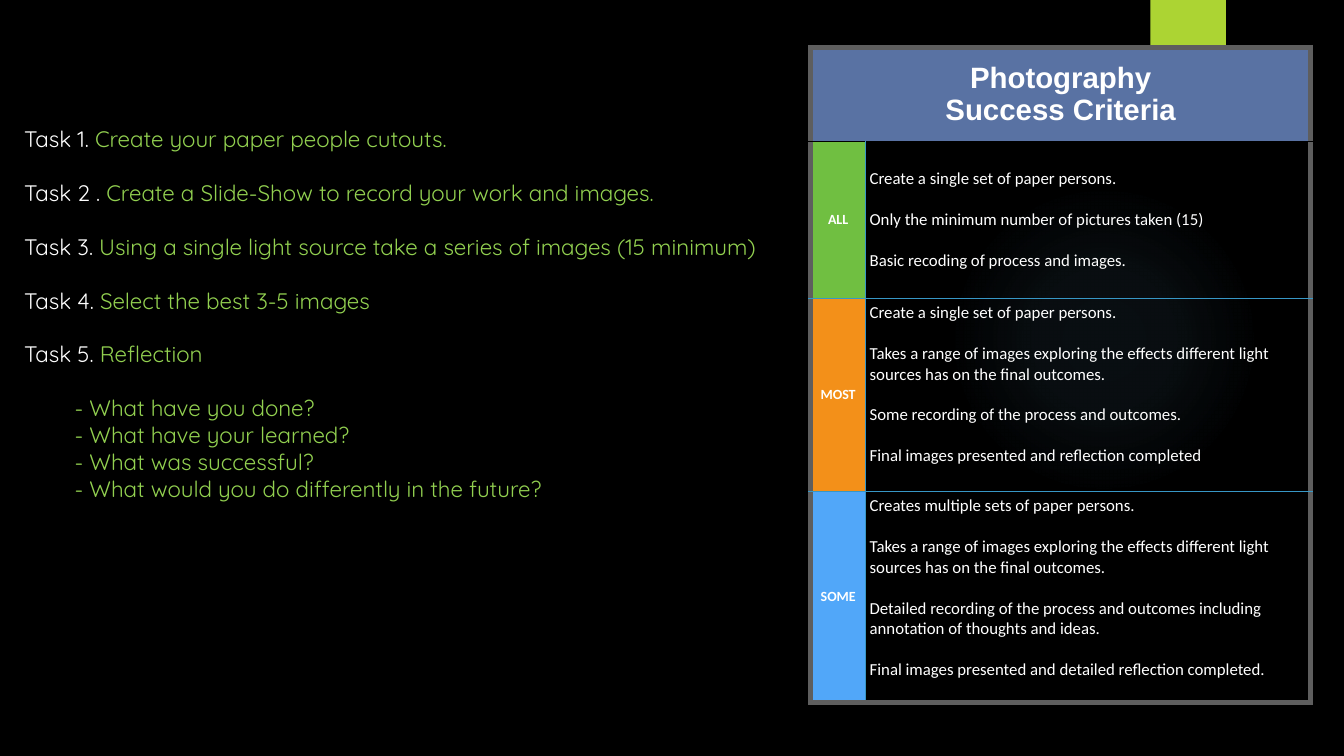
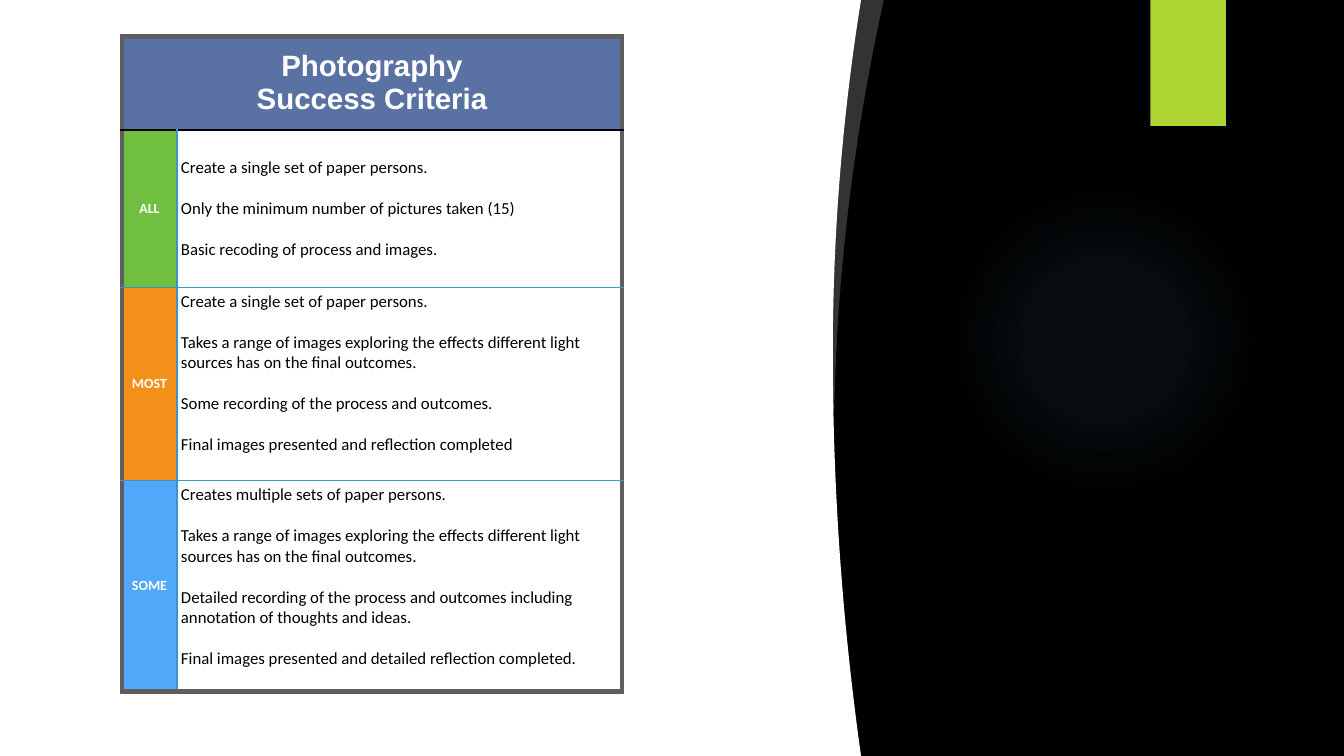
from dataclasses import dataclass

from lxml.etree import SubElement
from pptx import Presentation
from pptx.dml.color import RGBColor
from pptx.enum.shapes import MSO_SHAPE
from pptx.enum.text import MSO_ANCHOR, MSO_AUTO_SIZE, PP_ALIGN
from pptx.oxml import parse_xml
from pptx.oxml.ns import nsdecls, qn
from pptx.util import Inches, Pt

RECTANGLE, OVAL = MSO_SHAPE.RECTANGLE, MSO_SHAPE.OVAL
MIDDLE, TOP = MSO_ANCHOR.MIDDLE, MSO_ANCHOR.TOP
CENTER, LEFT = PP_ALIGN.CENTER, PP_ALIGN.LEFT
NO_AUTOFIT = MSO_AUTO_SIZE.NONE
SLIDE_W, SLIDE_H = 13.33, 7.5


@dataclass(frozen=True)
class Theme:
    """Colours, fonts and type sizes used by every slide."""
    dark: str = "000000"
    light: str = "FFFFFF"
    tab: str = "ACD433"
    glow: str = "7AC4F0"
    task: str = "92D050"
    header: str = "5972A3"
    frame: str = "5E5E5E"
    rule: str = "3797C6"
    frame_width: float = 4
    rule_width: float = 1
    task_font: str = "Quicksand"
    header_font: str = "Arial"
    table_font: str = "Calibri"
    task_size: float = 16
    header_size: float = 21
    label_size: float = 10
    criteria_size: float = 12
    task_gap: float = 19.3
    criteria_gap: float = 14.6


THEME = Theme()

TASKS = [
    ("Task 1. ", "Create your paper people cutouts."),
    ("Task 2 . ", "Create a Slide-Show to record your work and images."),
    ("Task 3. ", "Using a single light source take a series of images (15 minimum)"),
    ("Task 4. ", "Select the best 3-5 images"),
    ("Task 5. ", "Reflection"),
]
REFLECTIONS = [
    "- What have you done?",
    "- What have your learned?",
    "- What was successful?",
    "- What would you do differently in the future?",
]
HEADING = ["Photography", "Success Criteria"]
RANGE_OF_IMAGES = ("Takes a range of images exploring the effects different light "
                   "sources has on the final outcomes.")
LEVELS = [
    ("ALL", "70BF41", 1.56, 0.04, [
        "Create a single set of paper persons.",
        "Only the minimum number of pictures taken (15)",
        "Basic recoding of process and images.",
    ]),
    ("MOST", "F39019", 1.92, 0.25, [
        "Create a single set of paper persons.",
        RANGE_OF_IMAGES,
        "Some recording of the process and outcomes.",
        "Final images presented and reflection completed",
    ]),
    ("SOME", "51A7F9", 2.09, 0.22, [
        "Creates multiple sets of paper persons.",
        RANGE_OF_IMAGES,
        "Detailed recording of the process and outcomes including "
        "annotation of thoughts and ideas.",
        "Final images presented and detailed reflection completed.",
    ]),
]
HEADER_H = 0.93
LABEL_SHARE = 0.11


def rgb(value):
    """Turn a hex string into a colour."""
    return RGBColor.from_string(value)


def paint(shape, colour):
    """Give a shape a flat fill without outline or shadow."""
    shape.fill.solid()
    shape.fill.fore_color.rgb = rgb(colour)
    shape.line.fill.background()
    shape.shadow.inherit = False


def add_run(paragraph, text, font, size, colour, bold=False):
    """Append one formatted run to a paragraph."""
    run = paragraph.add_run()
    run.text = text
    run.font.name, run.font.size, run.font.bold = font, Pt(size), bold
    run.font.color.rgb = rgb(colour)


def next_paragraph(frame, index):
    """Return the first paragraph of a frame or a new one after it."""
    return frame.paragraphs[0] if index == 0 else frame.add_paragraph()


def add_block(slide, kind, box, colour):
    """Place a flat preset shape in a box."""
    block = slide.shapes.add_shape(kind, *map(Inches, box))
    paint(block, colour)
    return block


def add_outline(slide, points, colour):
    """Draw a closed outline through points given in inches."""
    corners = [(Inches(x), Inches(y)) for x, y in points]
    builder = slide.shapes.build_freeform(*corners[0])
    builder.add_line_segments(corners[1:], close=True)
    outline = builder.convert_to_shape()
    paint(outline, colour)
    return outline


def add_backdrop(slide):
    """Place the faint round glow and the green tab."""
    glow = add_block(slide, OVAL, (9.41, 1.83, 3.08, 3.08), THEME.glow)
    stops = "".join(
        f'<a:gs pos="{position}000"><a:srgbClr val="{THEME.glow}">'
        f'<a:alpha val="{alpha}000"/></a:srgbClr></a:gs>'
        for position, alpha in ((0, 7), (36, 6), (69, 0), (100, 0)))
    gradient = parse_xml(
        f'<a:gradFill {nsdecls("a")} rotWithShape="1"><a:gsLst>{stops}</a:gsLst>'
        '<a:path path="circle"><a:fillToRect l="50000" t="50000" r="50000" b="50000"/>'
        '</a:path></a:gradFill>')
    properties = glow._element.spPr
    properties.replace(properties.find(qn("a:solidFill")), gradient)
    add_block(slide, RECTANGLE, (11.41, 0, 0.75, 1.25), THEME.tab)


def add_curved_panel(slide):
    """Cover the left of the slide with a white panel that has a curved edge."""
    waist_x, waist_y, bulge, steps = 8.26, 3.5, 0.28, 40
    panel_w = 7.83
    add_block(slide, RECTANGLE, (0, 0, panel_w, SLIDE_H), THEME.light)

    sliver_h, sliver_left = 4.06, 8.2
    heights = [sliver_h * step / steps for step in range(steps + 1)]
    rim = [(8.27 + 0.0245 * (4.5 - y) ** 2, y) for y in heights]
    sliver = add_outline(slide, [(sliver_left, sliver_h), (sliver_left, 0)] + rim,
                         THEME.light)
    tint = sliver._element.spPr.find(qn("a:solidFill"))[0]
    SubElement(tint, qn("a:alpha")).set("val", "20000")

    edge = []
    for step in range(steps + 1):
        y = SLIDE_H * step / steps
        reach = waist_y if y < waist_y else SLIDE_H - waist_y
        edge.append((waist_x + bulge * ((y - waist_y) / reach) ** 2, y))
    add_outline(slide, [(7.07, SLIDE_H), (7.07, 0)] + edge, THEME.light)


def format_task_line(paragraph, indent, gap):
    """Drop the bullet and set the indent and spacing of a list line."""
    properties = paragraph._p.get_or_add_pPr()
    properties.set("marL", str(Inches(indent)))
    properties.set("indent", "0")
    SubElement(properties, qn("a:buNone"))
    paragraph.alignment = LEFT
    paragraph.line_spacing = 1.0
    paragraph.space_before = Pt(gap)
    paragraph.space_after = Pt(0)


def add_task_list(slide, box):
    """Fill the body placeholder with the tasks and reflection questions."""
    body = slide.placeholders[1]
    body.left, body.top, body.width, body.height = map(Inches, box)
    frame = body.text_frame
    frame.word_wrap, frame.auto_size = True, NO_AUTOFIT
    frame.vertical_anchor = TOP
    for index, (label, task) in enumerate(TASKS):
        line = next_paragraph(frame, index)
        format_task_line(line, 0, THEME.task_gap if index else 0)
        add_run(line, label, THEME.task_font, THEME.task_size, THEME.light)
        add_run(line, task, THEME.task_font, THEME.task_size, THEME.task)
    for index, question in enumerate(REFLECTIONS):
        line = frame.add_paragraph()
        format_task_line(line, 0.5, 0 if index else THEME.task_gap)
        add_run(line, question, THEME.task_font, THEME.task_size, THEME.task)


def set_borders(cell, **sides):
    """Draw the given cell sides, each a colour and a width in points."""
    properties = cell._tc.get_or_add_tcPr()
    for side in "LRTB":
        if side in sides:
            colour, width = sides[side]
            line = SubElement(properties, qn(f"a:ln{side}"), w=str(Pt(width)))
            fill = SubElement(line, qn("a:solidFill"))
            SubElement(fill, qn("a:srgbClr"), val=colour)


def fill_cell(cell, lines, style, align, gap=0, fill=None, bottom=0.04):
    """Write lines of one style into a cell and set its fill and margins."""
    cell.margin_left = cell.margin_right = cell.margin_top = Inches(0.04)
    cell.margin_bottom = Inches(bottom)
    cell.vertical_anchor = MIDDLE
    if fill:
        cell.fill.solid()
        cell.fill.fore_color.rgb = rgb(fill)
    else:
        cell.fill.background()
    for index, text in enumerate(lines):
        paragraph = next_paragraph(cell.text_frame, index)
        paragraph.alignment = align
        paragraph.space_before = Pt(gap if index else 0)
        add_run(paragraph, text, *style)


def add_criteria_table(slide, left, top, width, ink):
    """Place the success criteria table with its criteria in the given ink."""
    heights = [HEADER_H] + [level[2] for level in LEVELS]
    table = slide.shapes.add_table(
        len(heights), 2, Inches(left), Inches(top), Inches(width),
        Inches(sum(heights))).table
    table.first_row = table.horz_banding = False
    table.columns[0].width = Inches(width * LABEL_SHARE)
    table.columns[1].width = Inches(width * (1 - LABEL_SHARE))
    for row, height in zip(table.rows, heights):
        row.height = Inches(height)

    frame = (THEME.frame, THEME.frame_width)
    rule = (THEME.rule, THEME.rule_width)
    divider = (THEME.dark, THEME.rule_width)
    heading, heading_rest = table.cell(0, 0), table.cell(0, 1)
    heading.merge(heading_rest)
    for cell in (heading, heading_rest):
        set_borders(cell, L=frame, R=frame, T=frame, B=divider)
    fill_cell(heading, HEADING,
              (THEME.header_font, THEME.header_size, THEME.light, True),
              CENTER, fill=THEME.header)

    label_style = (THEME.table_font, THEME.label_size, THEME.light, True)
    criteria_style = (THEME.table_font, THEME.criteria_size, ink)
    for row, (label, colour, _, bottom, criteria) in enumerate(LEVELS, 1):
        above = divider if row == 1 else rule
        below = frame if row == len(LEVELS) else rule
        label_cell, criteria_cell = table.cell(row, 0), table.cell(row, 1)
        set_borders(label_cell, L=frame, R=rule, T=above, B=below)
        set_borders(criteria_cell, L=rule, R=frame, T=above, B=below)
        fill_cell(label_cell, [label], label_style, CENTER, fill=colour)
        fill_cell(criteria_cell, criteria, criteria_style, LEFT,
                  gap=THEME.criteria_gap, bottom=bottom)


def build_task_slide(deck):
    """Build the slide with the task list beside the criteria."""
    slide = deck.slides.add_slide(deck.slide_layouts[1])
    title = slide.shapes.title._element
    title.getparent().remove(title)
    add_backdrop(slide)
    add_task_list(slide, (0.14, 1.19, 7.76, 3.87))
    add_criteria_table(slide, 8.04, 0.47, 4.96, THEME.light)


def build_criteria_slide(deck):
    """Build the slide with the criteria on the curved white panel."""
    slide = deck.slides.add_slide(deck.slide_layouts[6])
    add_backdrop(slide)
    add_curved_panel(slide)
    add_criteria_table(slide, 1.21, 0.36, 4.96, THEME.dark)


def main():
    """Build and save the presentation."""
    deck = Presentation()
    deck.slide_width, deck.slide_height = Inches(SLIDE_W), Inches(SLIDE_H)
    backdrop = deck.slide_master.background.fill
    backdrop.solid()
    backdrop.fore_color.rgb = rgb(THEME.dark)
    build_task_slide(deck)
    build_criteria_slide(deck)
    deck.save("out.pptx")


if __name__ == "__main__":
    main()
